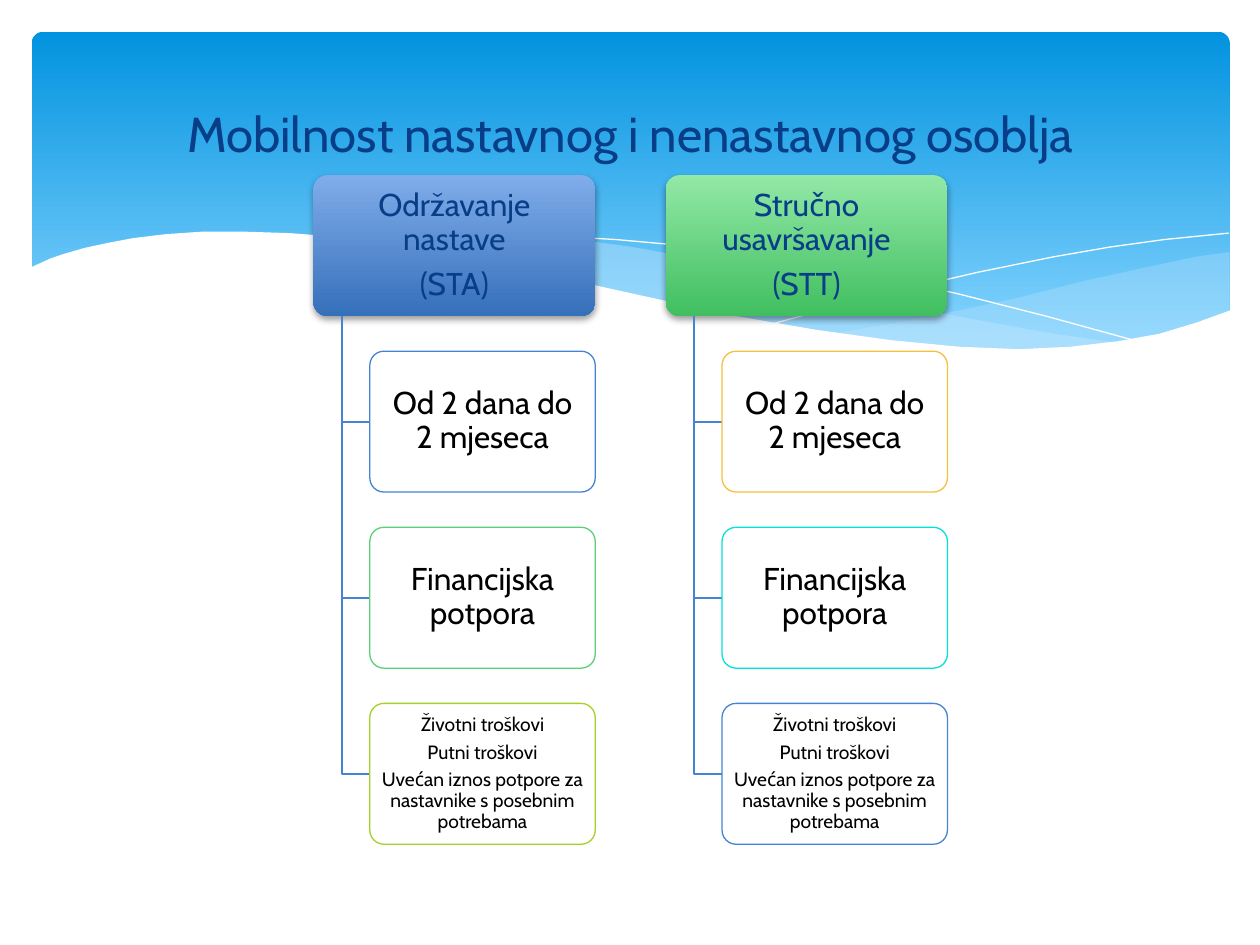
from lxml import etree
from pptx import Presentation
from pptx.dml.color import RGBColor
from pptx.enum.shapes import MSO_SHAPE
from pptx.enum.text import MSO_ANCHOR, PP_ALIGN
from pptx.oxml.ns import qn
from pptx.util import Cm, Pt

ROUNDED = MSO_SHAPE.ROUNDED_RECTANGLE
MIDDLE = MSO_ANCHOR.MIDDLE
CENTER = PP_ALIGN.CENTER

# Colours
WHITE = RGBColor(0xFF, 0xFF, 0xFF)
BLACK = RGBColor(0x00, 0x00, 0x00)
NAVY = RGBColor(0x07, 0x3E, 0x87)
BLUE = RGBColor(0x45, 0x84, 0xD3)
GREEN = RGBColor(0x5B, 0xD0, 0x78)
LIME = RGBColor(0xA5, 0xD0, 0x28)
AMBER = RGBColor(0xF5, 0xC0, 0x40)
CYAN = RGBColor(0x05, 0xE0, 0xDB)
PALE_BLUE = RGBColor(0xC6, 0xE7, 0xFC)
SKY = (RGBColor(0x02, 0x93, 0xE0), RGBColor(0x83, 0xD3, 0xFE))
BLUE_FADE = (RGBColor(0x80, 0xAC, 0xEA), RGBColor(0x35, 0x70, 0xBA))
GREEN_FADE = (RGBColor(0x92, 0xE8, 0xA6), RGBColor(0x41, 0xBF, 0x60))

# Wave outlines, in centimetres
RIGHT_WAVE = [
    (24.79, 5.08), (24.08, 5.18), (23.01, 5.41), (21.87, 5.66), (20.45, 6.02),
    (19.13, 6.3), (17.93, 6.53), (16.79, 6.73), (17.55, 6.83), (18.59, 6.96),
    (19.53, 7.04), (20.68, 7.06), (21.69, 7.01), (22.58, 6.91), (23.39, 6.73),
    (24.1, 6.53), (24.79, 6.27)]
MIDDLE_WAVE = [
    (22.68, 6.93), (21.26, 6.73), (19.69, 6.45), (17.93, 6.1), (15.98, 5.64),
    (14.83, 5.36), (13.74, 5.16), (12.75, 4.98), (11.81, 4.85), (10.67, 4.75),
    (9.65, 4.7), (8.74, 4.72), (7.95, 4.78), (7.26, 4.85), (8.69, 5.05),
    (10.26, 5.36), (11.4, 5.64), (13.46, 6.1), (15.27, 6.48), (16.89, 6.76),
    (18.34, 6.96), (19.63, 7.04), (20.78, 7.06), (21.77, 7.04)]
FALLING_LINE = [
    (7.85, 4.95), (8.74, 4.83), (9.83, 4.75), (11, 4.75), (12.42, 4.83),
    (13.54, 4.93), (14.78, 5.08), (16.15, 5.28), (17.65, 5.56), (19.3, 5.92),
    (21.11, 6.38), (23.04, 6.91)]
RISING_LINE = [
    (15.57, 6.53), (17.07, 6.12), (18.29, 5.82), (19.71, 5.49), (21.23, 5.18),
    (22.38, 4.98), (23.47, 4.83), (24.77, 4.7)]
FRONT_WAVE = [
    (24.82, 6.25), (24.13, 6.5), (23.37, 6.73), (22.53, 6.88), (21.59, 6.99),
    (20.55, 7.04), (19.33, 6.99), (17.98, 6.86), (16.46, 6.65), (14.71, 6.35),
    (13.44, 6.07), (12.07, 5.77), (10.62, 5.41), (9.27, 5.13), (8.03, 4.93),
    (6.88, 4.78), (5.84, 4.7), (4.9, 4.67), (4.09, 4.67), (3.35, 4.72),
    (2.69, 4.8), (2.16, 4.9), (1.7, 5), (1.32, 5.11), (1.02, 5.21),
    (0.58, 5.41), (0.58, 8.36), (24.82, 8.36)]

# Diagram content: heading, fade, outlines of the three boxes below
COLUMNS = [
    (["Održavanje nastave", "(STA)"], BLUE_FADE, (BLUE, GREEN, LIME)),
    (["Stručno usavršavanje", "(STT)"], GREEN_FADE, (AMBER, CYAN, BLUE)),
]
DETAILS = [
    (["Od 2 dana do 2 mjeseca"], 18),
    (["Financijska potpora"], 18),
    (["Životni troškovi", "Putni troškovi",
      "Uvećan iznos potpore za nastavnike s posebnim potrebama"], 11),
]

# Diagram grid, in centimetres
LEFT, TOP = 6.32, 3.53
WIDTH, HEIGHT = 5.68, 2.84
PITCH = 1.25
INDENT = 0.2 * WIDTH


class SlideBuilder:
    font = "Cabin"

    def __init__(self, page):
        self.page = page

    def fill_solid(self, shape, color, alpha=100):
        shape.fill.solid()
        shape.fill.fore_color.rgb = color
        if alpha < 100:
            node = shape.element.spPr.find(qn("a:solidFill"))[0]
            etree.SubElement(node, qn("a:alpha"), val=str(alpha * 1000))

    def fill_fade(self, shape, colors, end=1.0):
        shape.fill.gradient()
        shape.fill.gradient_angle = 270
        for stop, color, position in zip(shape.fill.gradient_stops, colors, (0, end)):
            stop.color.rgb = color
            stop.position = position

    def drop_shadow(self, shape):
        effects = shape.element.spPr.find(qn("a:effectLst"))
        shadow = etree.SubElement(
            effects, qn("a:outerShdw"), blurRad=str(Pt(4)), dist=str(Pt(2)),
            dir="5400000", rotWithShape="0")
        color = etree.SubElement(shadow, qn("a:srgbClr"), val="000000")
        etree.SubElement(color, qn("a:alpha"), val="38000")

    def rounded(self, left, top, width, height, corner):
        shape = self.page.shapes.add_shape(
            ROUNDED, Cm(left), Cm(top), Cm(width), Cm(height))
        shape.adjustments[0] = corner
        shape.shadow.inherit = False
        shape.line.fill.background()
        return shape

    def outline(self, points, closed):
        first, *rest = [(Cm(x), Cm(y)) for x, y in points]
        builder = self.page.shapes.build_freeform(*first)
        builder.add_line_segments(rest, close=closed)
        shape = builder.convert_to_shape()
        shape.shadow.inherit = False
        return shape

    def wave(self, points, color, alpha=100):
        shape = self.outline(points, True)
        self.fill_solid(shape, color, alpha)
        shape.line.fill.background()

    def path_line(self, points, color, width):
        shape = self.outline(points, False)
        shape.fill.background()
        shape.line.color.rgb = color
        shape.line.width = Pt(width)

    def set_text(self, shape, lines, size, color, inset, spacing=0.9, after=0.35):
        frame = shape.text_frame
        frame.word_wrap = True
        frame.vertical_anchor = MIDDLE
        frame.margin_left = frame.margin_right = Cm(inset)
        frame.margin_top = frame.margin_bottom = Cm(inset)
        for index, line in enumerate(lines):
            para = frame.add_paragraph() if index else frame.paragraphs[0]
            para.text = line
            para.alignment = CENTER
            para.line_spacing = spacing
            para.space_after = Pt(size * after)
            para.font.name = self.font
            para.font.size = Pt(size)
            para.font.color.rgb = color

    def title(self, text):
        box = self.page.shapes.add_textbox(Cm(1.27), Cm(0.94), Cm(22.86), Cm(3.48))
        self.set_text(box, [text], 28, NAVY, 0.2, spacing=1.0, after=0)

    def heading(self, left, lines, fade):
        box = self.rounded(left, TOP, WIDTH, HEIGHT, 0.1)
        self.fill_fade(box, fade)
        self.drop_shadow(box)
        self.set_text(box, lines, 18, NAVY, 0.17)

    def detail(self, left, top, lines, size, color):
        box = self.rounded(left, top, WIDTH - INDENT, HEIGHT, 0.1)
        self.fill_solid(box, WHITE, 90)
        box.line.color.rgb = color
        box.line.width = Pt(0.75)
        self.set_text(box, lines, size, BLACK, 0.17 if size > 11 else 0.13)


def main():
    deck = Presentation()
    deck.slide_width, deck.slide_height = Cm(25.4), Cm(19.05)
    slide = SlideBuilder(deck.slides.add_slide(deck.slide_layouts[6]))

    # Sky banner with waves
    banner = slide.rounded(0.64, 0.64, 24.15, 6.86, 0.034)
    slide.fill_fade(banner, SKY, end=0.9)
    slide.wave(RIGHT_WAVE, PALE_BLUE, 29)
    slide.wave(MIDDLE_WAVE, PALE_BLUE, 40)
    for points in (FALLING_LINE, RISING_LINE):
        slide.path_line(points, WHITE, 0)
    slide.wave(FRONT_WAVE, WHITE)

    # Two columns of the hierarchy
    for column, (lines, fade, colors) in enumerate(COLUMNS):
        left = LEFT + column * PITCH * WIDTH
        slide.heading(left, lines, fade)
        spine, branch = left + INDENT / 2, left + INDENT
        for row, ((texts, size), color) in enumerate(zip(DETAILS, colors), 1):
            top = TOP + row * PITCH * HEIGHT
            center = top + HEIGHT / 2
            elbow = [(spine, TOP + HEIGHT), (spine, center), (branch, center)]
            slide.path_line(elbow, BLUE, 1.25)
            slide.detail(branch, top, texts, size, color)

    slide.title("Mobilnost nastavnog i nenastavnog osoblja")
    deck.save("out.pptx")


if __name__ == "__main__":
    main()
